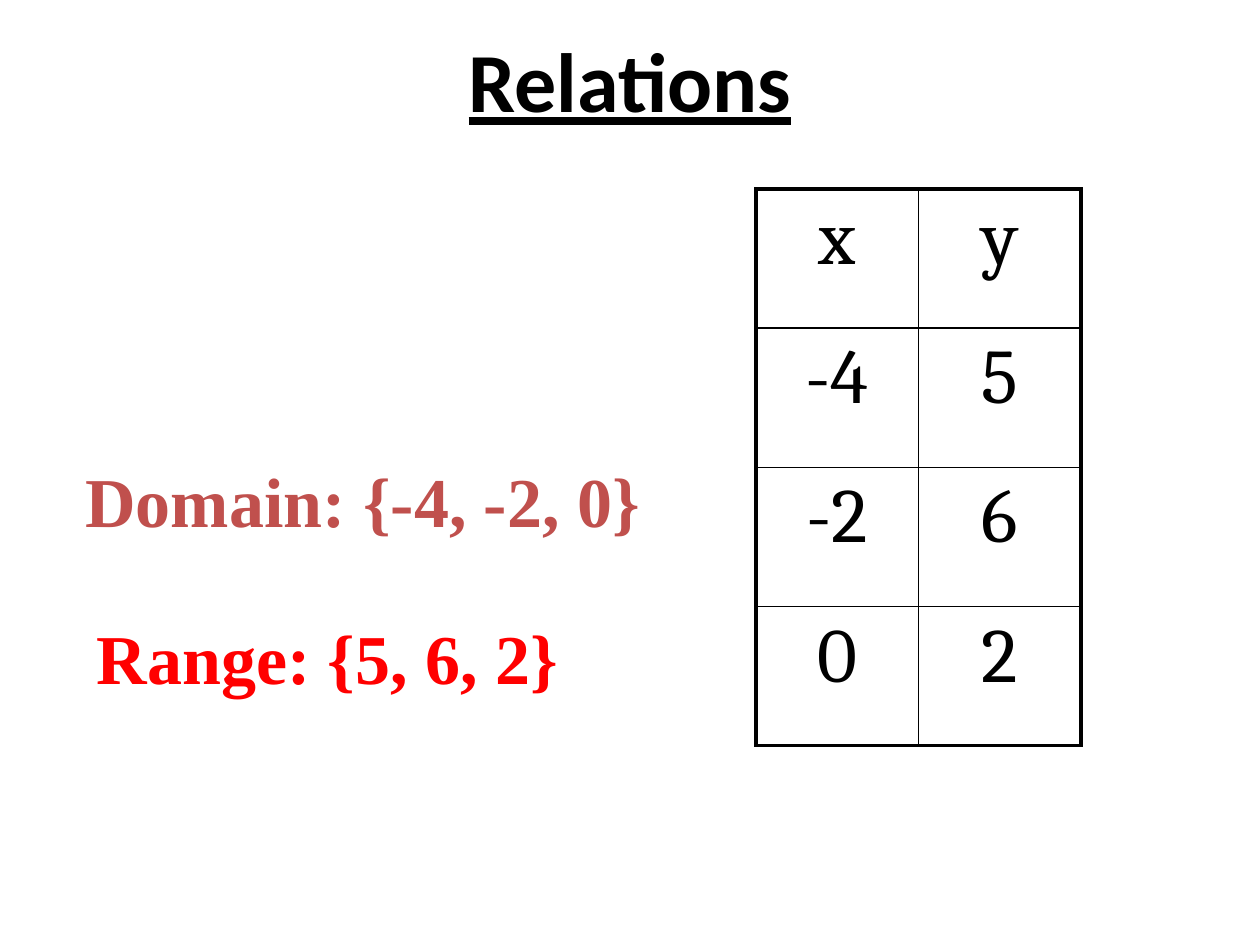
from dataclasses import dataclass

from lxml.etree import SubElement
from pptx import Presentation
from pptx.dml.color import RGBColor
from pptx.enum.text import MSO_ANCHOR, MSO_AUTO_SIZE, PP_ALIGN
from pptx.oxml.ns import qn
from pptx.slide import Slide
from pptx.table import _Cell
from pptx.text.text import _Paragraph
from pptx.util import Inches, Pt

COLORS = {"black": "000000", "domain": "C0504D", "range": "FF0000"}
RELATION = [("x", "y"), ("-4", "5"), ("-2", "6"), ("0", "2")]
OUTER_LINE, INNER_LINE = Pt(2.25), Pt(1)


@dataclass
class Style:
    font: str
    size: float
    color: str = "black"
    bold: bool = False
    underline: bool = False
    centered: bool = False
    space_before: int = 0


@dataclass
class Label:
    text: str
    left: float
    top: float
    width: float
    height: float
    style: Style
    is_title: bool = False


CELL_STYLE = Style("Cambria", 44, centered=True, space_before=20)
LABELS = [
    Label("Relations", 0.75, 0, 8.5, 1.25,
          Style("Calibri", 48, bold=True, underline=True, centered=True), is_title=True),
    Label("Domain: {-4, -2, 0}", 0.58, 3.58, 4.92, 1.77,
          Style("Times New Roman", 40, "domain", bold=True, space_before=50)),
    Label("Range: {5, 6, 2}", 0.67, 4.83, 3.92, 0.77,
          Style("Times New Roman", 40, "range", bold=True, space_before=50)),
]


def write(para: _Paragraph, text: str, style: Style) -> None:
    para.text = text
    para.alignment = PP_ALIGN.CENTER if style.centered else PP_ALIGN.LEFT
    if style.space_before:
        spacing = SubElement(para._p.get_or_add_pPr(), qn("a:spcBef"))
        SubElement(spacing, qn("a:spcPct"), val=str(style.space_before * 1000))
    font = para.runs[0].font
    font.name = style.font
    font.size = Pt(style.size)
    font.bold = style.bold
    font.underline = style.underline
    font.color.rgb = RGBColor.from_string(COLORS[style.color])


def add_label(slide: Slide, label: Label) -> None:
    box = slide.shapes.add_textbox(
        Inches(label.left), Inches(label.top), Inches(label.width), Inches(label.height))
    frame = box.text_frame
    frame.word_wrap = True
    frame.auto_size = MSO_AUTO_SIZE.NONE if label.is_title else MSO_AUTO_SIZE.SHAPE_TO_FIT_TEXT
    frame.vertical_anchor = MSO_ANCHOR.MIDDLE if label.is_title else MSO_ANCHOR.TOP
    write(frame.paragraphs[0], label.text, label.style)


def set_borders(cell: _Cell, outer_sides: dict[str, bool]) -> None:
    properties = cell._tc.get_or_add_tcPr()
    for side, is_outer in outer_sides.items():
        width = OUTER_LINE if is_outer else INNER_LINE
        line = SubElement(properties, qn(f"a:ln{side}"), w=str(width))
        fill = SubElement(line, qn("a:solidFill"))
        SubElement(fill, qn("a:srgbClr"), val=COLORS["black"])


def add_relation_table(slide: Slide) -> None:
    row_count, column_count = len(RELATION), len(RELATION[0])
    table = slide.shapes.add_table(
        row_count, column_count, Inches(6), Inches(1.5), Inches(2.58), Inches(4.42)).table
    table.first_row = False
    table.horz_banding = False
    for row, values in enumerate(RELATION):
        for column, value in enumerate(values):
            cell = table.cell(row, column)
            write(cell.text_frame.paragraphs[0], value, CELL_STYLE)
            set_borders(cell, {
                "L": column == 0,
                "R": column == column_count - 1,
                "T": row == 0,
                "B": row == row_count - 1,
            })
            cell.fill.background()


def main() -> None:
    deck = Presentation()
    deck.slide_width, deck.slide_height = Inches(10), Inches(7.5)
    slide = deck.slides.add_slide(deck.slide_layouts[6])
    add_relation_table(slide)
    for label in LABELS:
        add_label(slide, label)
    deck.save("out.pptx")


if __name__ == "__main__":
    main()
